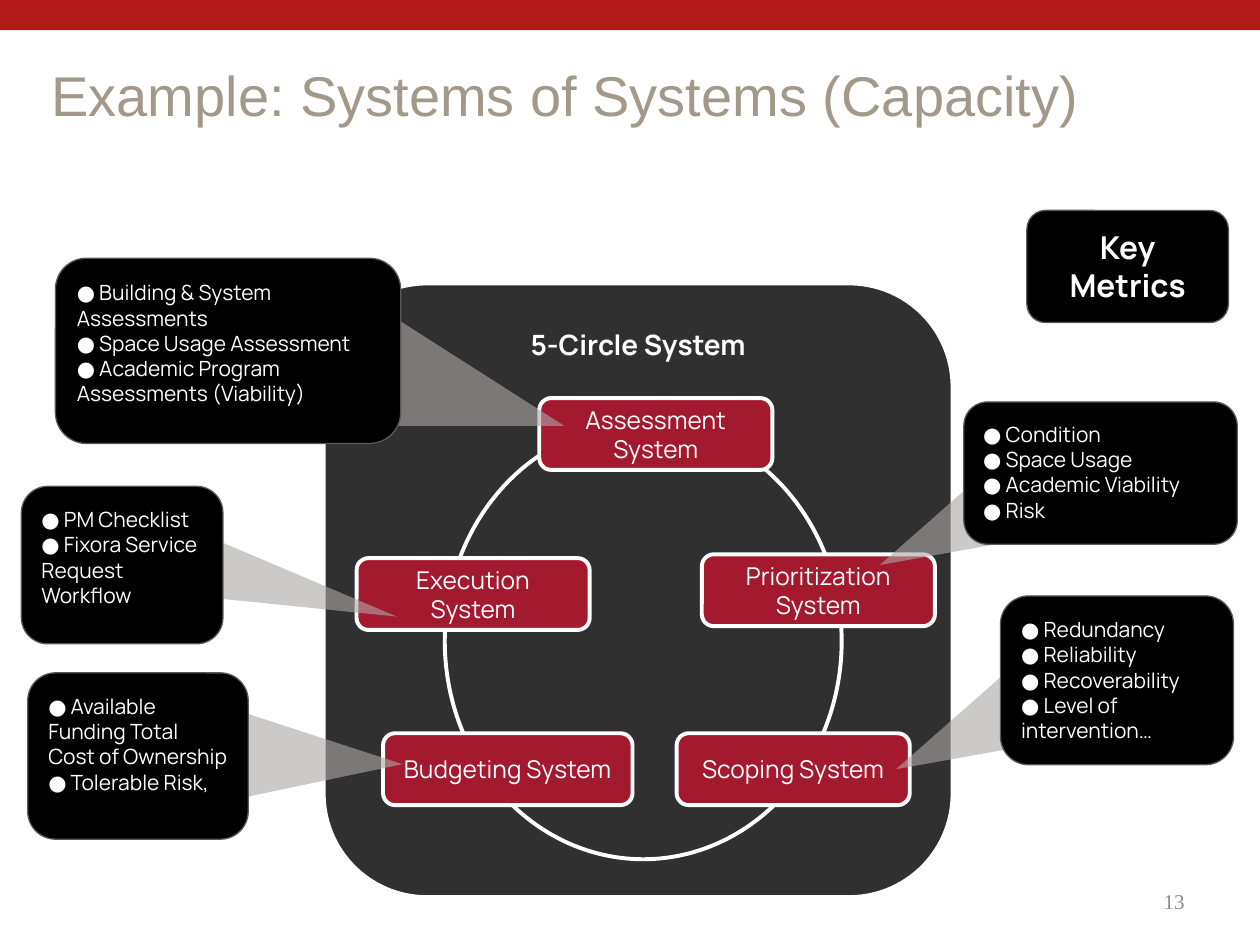
"""Build the Systems of Systems (Capacity) slide."""
from lxml import etree
from pptx import Presentation
from pptx.dml.color import RGBColor
from pptx.enum.shapes import MSO_SHAPE as Shape
from pptx.enum.text import MSO_ANCHOR as Anchor, PP_ALIGN as Align
from pptx.oxml.ns import qn
from pptx.util import Inches, Pt

COLORS = {
    "banner": "B31B1B", "title": "A2998B", "number": "8C8C8C",
    "panel": "303030", "system": "A3192E", "metric": "000000",
    "metric_line": "595959", "pointer": "ADA7A7", "white": "FFFFFF",
}
TITLE = "Example: Systems of Systems (Capacity)"
PANEL_TITLE = "5-Circle System"
SLIDE_NUMBER = "13"
KEY = "Key Metrics"
ROUNDING = 0.167
SYSTEM_WIDTH, SYSTEM_HEIGHT = 1.85, 0.57
POINTER_OPACITY = 61

SYSTEMS = [
    ("Assessment System", 4.28, 3.16, SYSTEM_WIDTH),
    ("Execution System", 2.83, 4.43, SYSTEM_WIDTH),
    ("Prioritization System", 5.57, 4.4, SYSTEM_WIDTH),
    ("Budgeting System", 3.04, 5.82, 1.98),
    ("Scoping System", 5.37, 5.82, SYSTEM_WIDTH),
]
POINTERS = [
    ((7.3, 3.15, 1.04, 1.86), 244.2, 0.5),
    ((7.43, 4.77, 1.04, 1.86), 244.2, 0.5),
    ((2.08, 3.71, 0.52, 1.68), 95.8, 1),
    ((1.69, 4.86, 1.04, 1.86), 81.1, 0.908),
    ((3.13, 2.26, 1.02, 1.75), 106.3, 0.5),
]
METRICS = [
    ((7.65, 3.19, 2.17, 1.13),
     ["Condition", "Space Usage", "Academic Viability", "Risk"]),
    ((0.17, 3.86, 1.6, 1.25),
     ["PM Checklist", "Fixora Service Request Workflow"]),
    ((0.22, 5.34, 1.75, 1.32),
     ["Available Funding Total Cost of Ownership", "Tolerable Risk,"]),
    ((0.44, 2.05, 2.74, 1.47),
     ["Building & System Assessments", "Space Usage Assessment",
      "Academic Program Assessments (Viability)"]),
    ((7.94, 4.73, 1.85, 1.34),
     ["Redundancy", "Reliability", "Recoverability", "Level of intervention…"]),
]


def rgb(name):
    return RGBColor.from_string(COLORS[name])


def write(shape, lines, size, font="Manrope", color="white", bold=False,
          align=Align.LEFT, anchor=Anchor.TOP, margin=0.1):
    frame = shape.text_frame
    frame.word_wrap = True
    frame.vertical_anchor = anchor
    frame.margin_left = frame.margin_right = Inches(0.1)
    frame.margin_top = frame.margin_bottom = Inches(margin)
    for index, line in enumerate(lines):
        paragraph = frame.add_paragraph() if index else frame.paragraphs[0]
        paragraph.alignment = align
        run = paragraph.add_run()
        run.text = line
        run.font.size = Pt(size)
        run.font.name = font
        run.font.bold = bold
        run.font.color.rgb = rgb(color)


def add_shape(slide, kind, box, fill, line=None, width=0.75, adjustment=None):
    shape = slide.shapes.add_shape(kind, *map(Inches, box))
    shape.shadow.inherit = False
    shape.fill.solid()
    shape.fill.fore_color.rgb = rgb(fill)
    if line:
        shape.line.color.rgb = rgb(line)
        shape.line.width = Pt(width)
    else:
        shape.line.fill.background()
    if adjustment is not None:
        shape.adjustments[0] = adjustment
    return shape


def add_rounded(slide, box, fill, line, width=0.75):
    return add_shape(slide, Shape.ROUNDED_RECTANGLE, box, fill, line, width, ROUNDING)


def add_pointer(slide, box, rotation, tip):
    pointer = add_shape(slide, Shape.ISOSCELES_TRIANGLE, box, "pointer", adjustment=tip)
    pointer.rotation = rotation
    color = pointer.fill._xPr.find(qn("a:solidFill"))[0]
    etree.SubElement(color, qn("a:alpha")).set("val", str(POINTER_OPACITY * 1000))


def add_text(slide, box, text, size, **style):
    write(slide.shapes.add_textbox(*map(Inches, box)), [text], size,
          anchor=Anchor.MIDDLE, margin=0.05, **style)


def main():
    presentation = Presentation()
    presentation.slide_width, presentation.slide_height = Inches(10), Inches(7.5)
    slide = presentation.slides.add_slide(presentation.slide_layouts[6])

    add_shape(slide, Shape.RECTANGLE, (0, 0, 10, 0.24), "banner")
    add_text(slide, (7.17, 6.95, 2.33, 0.4), SLIDE_NUMBER, 12,
             font="Times New Roman", color="number", align=Align.RIGHT)
    add_text(slide, (0.31, 0.37, 9.49, 0.75), TITLE, 32, font="Arial", color="title")

    panel = add_rounded(slide, (2.58, 2.26, 4.97, 4.85), "panel", "white")
    write(panel, [PANEL_TITLE], 16, bold=True, align=Align.CENTER)
    add_shape(slide, Shape.OVAL, (3.53, 3.36, 3.15, 3.46), "panel", "white", 2.25)
    for name, left, top, width in SYSTEMS:
        system = add_rounded(slide, (left, top, width, SYSTEM_HEIGHT),
                             "system", "white", 2.25)
        write(system, [name], 14, align=Align.CENTER, anchor=Anchor.MIDDLE)

    key = add_rounded(slide, (8.15, 1.67, 1.6, 0.89), "metric", "metric_line")
    write(key, [KEY], 18, bold=True, align=Align.CENTER)
    for box, rotation, tip in POINTERS:
        add_pointer(slide, box, rotation, tip)
    for box, items in METRICS:
        metric = add_rounded(slide, box, "metric", "metric_line")
        write(metric, [f"● {item}" for item in items], 12)

    presentation.save("out.pptx")


if __name__ == "__main__":
    main()
